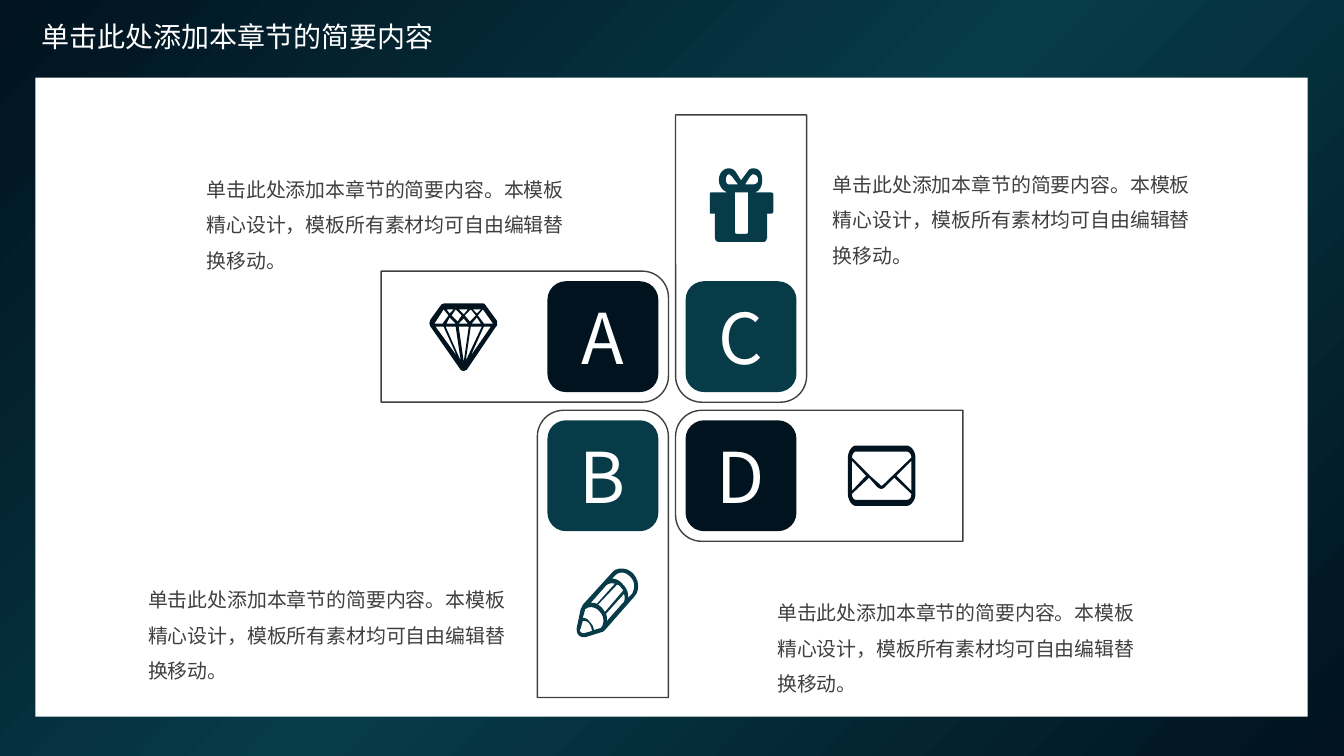
import copy

import pptx
import pptx.dml.color
import pptx.enum.shapes
import pptx.enum.text
import pptx.oxml.ns
import pptx.util

Inches = pptx.util.Inches
RGBColor = pptx.dml.color.RGBColor
SHAPE = pptx.enum.shapes.MSO_SHAPE
ALIGN = pptx.enum.text.PP_ALIGN
ANCHOR = pptx.enum.text.MSO_ANCHOR

NAVY = RGBColor(0x01, 0x13, 0x1F)
TEAL = RGBColor(0x07, 0x3B, 0x48)
WHITE = RGBColor(0xFF, 0xFF, 0xFF)
GREY = RGBColor(0x40, 0x40, 0x40)
FONT = "Noto Sans CJK SC"

TITLE = "单击此处添加本章节的简要内容"
CAPTION = "单击此处添加本章节的简要内容。本模板精心设计，模板所有素材均可自由编辑替换移动。"

TILE, ARM_WIDTH, ARM_LENGTH = 1.1, 1.3, 2.85
CURVE_STEPS = 6

# Icon contours in hundredths of an inch: pairs are corners, sixes are Bézier curves.
DIAMOND = [
    [(66, 16), (55, 1), (55, 1, 54, 0, 53, 0), (15, 0), (14, 0, 13, 1, 12, 1), (1, 16),
     (1, 17, 0, 18, 0, 20), (0, 21, 1, 23, 1, 23), (31, 66), (31, 66, 32, 67, 34, 67),
     (35, 67, 36, 66, 37, 66), (66, 23), (67, 23, 67, 21, 67, 20), (67, 18, 67, 17, 66, 16)],
    [(51, 6), (47, 10), (43, 6)],
    [(51, 20), (42, 20), (47, 14)],
    [(46, 12), (40, 18), (35, 12), (41, 6)],
    [(38, 20), (29, 20), (34, 15)],
    [(38, 6), (34, 11), (29, 6)],
    [(32, 12), (28, 18), (22, 12), (26, 6)],
    [(26, 20), (17, 20), (20, 14)],
    [(24, 6), (20, 10), (17, 6)],
    [(14, 6), (19, 12), (13, 20), (5, 20)],
    [(6, 23), (14, 23), (27, 52)],
    [(16, 23), (26, 23), (31, 57)],
    [(29, 23), (39, 23), (34, 58)],
    [(36, 57), (41, 23), (52, 23)],
    [(41, 52), (54, 23), (61, 23)],
    [(54, 20), (48, 12), (53, 6), (63, 20)],
]
ENVELOPE = [
    [(58, 0), (8, 0), (4, 0, 0, 6, 0, 12), (0, 48), (0, 54, 4, 60, 8, 60), (58, 60),
     (63, 60, 67, 54, 67, 48), (67, 12), (67, 6, 63, 0, 58, 0)],
    [(4, 15), (18, 30), (4, 45)],
    [(63, 48), (63, 52, 61, 54, 58, 54), (8, 54), (6, 54, 4, 52, 4, 48), (21, 32), (29, 41),
     (30, 42, 32, 43, 33, 43), (35, 43, 36, 42, 37, 41), (46, 32)],
    [(63, 45), (48, 30), (63, 15)],
    [(36, 38), (35, 39, 34, 40, 33, 40), (33, 40, 32, 39, 31, 38), (22, 30), (4, 12),
     (4, 9, 6, 6, 8, 6), (58, 6), (61, 6, 63, 9, 63, 12)],
]
PENCIL = [
    [(56, 5), (53, 2, 49, 0, 45, 0), (41, 0, 38, 1, 36, 3), (26, 14), (6, 36),
     (5, 38, 5, 39, 4, 40), (0, 59), (0, 59, 0, 60, 0, 61), (0, 65, 3, 68, 6, 68),
     (7, 68, 8, 68, 9, 68), (25, 63), (26, 63, 27, 62, 28, 61), (57, 28),
     (63, 22, 62, 12, 56, 5)],
    [(30, 50), (30, 49, 30, 47, 29, 45), (47, 25), (48, 29, 48, 33, 45, 35), (30, 52)],
    [(28, 43), (27, 42, 26, 40, 25, 39), (24, 38, 23, 37, 21, 36), (40, 16),
     (41, 16, 43, 17, 44, 19), (45, 20, 46, 21, 46, 22)],
    [(20, 35), (18, 34, 16, 34, 14, 34), (29, 17), (31, 15, 34, 14, 38, 15)],
    [(8, 64), (7, 64, 7, 64, 6, 64), (5, 64, 3, 63, 3, 61), (3, 61, 4, 60, 4, 59), (6, 52),
     (8, 52, 10, 52, 12, 54), (14, 57, 15, 59, 15, 62)],
    [(17, 61), (17, 58, 15, 55, 13, 53), (11, 50, 9, 49, 6, 49), (8, 42), (8, 41, 8, 40, 9, 40),
     (13, 37, 19, 38, 23, 43), (27, 47, 28, 54, 24, 59)],
    [(55, 25), (51, 29), (51, 28, 51, 28, 51, 27), (51, 23, 49, 19, 46, 16),
     (43, 12, 39, 10, 35, 10), (38, 7), (40, 5, 42, 4, 45, 4), (48, 4, 51, 6, 53, 8),
     (56, 11, 57, 14, 57, 17), (57, 20, 56, 23, 55, 25)],
]
GIFT = [
    [(63, 43), (63, 45, 61, 45, 61, 45), (57, 45), (57, 67), (57, 71, 55, 73, 54, 73), (9, 73),
     (6, 73, 5, 71, 5, 67), (5, 45), (2, 45), (0, 45, 0, 45, 0, 43), (0, 26),
     (0, 24, 0, 24, 2, 24), (19, 24), (14, 24, 9, 18, 9, 12), (9, 4, 14, 0, 19, 0),
     (22, 0, 25, 2, 26, 4), (31, 12), (37, 4), (38, 2, 40, 0, 43, 0), (49, 0, 52, 4, 52, 12),
     (52, 18, 49, 24, 43, 24), (61, 24), (61, 24, 63, 24, 63, 26)],
    [(28, 16), (22, 8), (22, 8, 20, 6, 19, 6), (17, 6, 16, 8, 16, 12), (16, 14, 17, 16, 19, 16)],
    [(38, 59), (38, 24), (25, 24), (25, 63), (25, 65, 26, 65, 28, 65), (35, 65),
     (37, 65, 38, 65, 38, 63)],
    [(43, 6), (41, 6, 41, 8, 40, 8), (35, 16), (43, 16), (46, 16, 48, 14, 48, 12),
     (48, 8, 46, 6, 43, 6)],
]

# letter, colour, tile centre, direction of the arm, its rotation, icon, icon corner from the centre
PETALS = [
    ("A", NAVY, (5.98, 3.34), (-1, 0), 90, DIAMOND, (-1.72, -0.33)),
    ("C", TEAL, (7.35, 3.34), (0, -1), 180, GIFT, (-0.31, -1.67)),
    ("B", TEAL, (5.98, 4.72), (0, 1), 0, PENCIL, (-0.26, 0.92)),
    ("D", NAVY, (7.35, 4.72), (1, 0), 270, ENVELOPE, (1.06, -0.3)),
]
CAPTION_CORNERS = [(2.05, 1.65), (8.26, 1.6), (1.47, 5.72), (7.71, 5.85)]


def style(shape, fill=None, line=None):
    shape.shadow.inherit = False
    if fill is None:
        shape.fill.background()
    else:
        shape.fill.solid()
        shape.fill.fore_color.rgb = fill
    if line is None:
        shape.line.fill.background()
    else:
        shape.line.color.rgb = line
        shape.line.width = pptx.util.Pt(1)


def write(shape, text, size, color, align=ALIGN.LEFT, anchor=ANCHOR.TOP, pitch=None, wrap=True):
    frame = shape.text_frame
    frame.word_wrap = wrap
    frame.vertical_anchor = anchor
    frame.margin_left = frame.margin_right = frame.margin_top = frame.margin_bottom = 0
    paragraph = frame.paragraphs[0]
    paragraph.alignment = align
    if pitch:
        paragraph.line_spacing = pptx.util.Pt(pitch)
    run = paragraph.add_run()
    run.text = text
    run.font.size = pptx.util.Pt(size)
    run.font.color.rgb = color
    run.font.name = FONT
    east_asian = run.font._element.makeelement(pptx.oxml.ns.qn("a:ea"), {"typeface": FONT})
    run.font._element.append(east_asian)


def flatten(contour):
    """Turn corners and curves into tenths of the contour's unit, curves as short chords."""
    points = []
    for step in contour:
        if len(step) == 2:
            points.append(step)
            continue
        controls = [points[-1], step[:2], step[2:4], step[4:]]
        for i in range(1, CURVE_STEPS + 1):
            t = i / CURVE_STEPS
            weights = ((1 - t) ** 3, 3 * t * (1 - t) ** 2, 3 * t * t * (1 - t), t ** 3)
            points.append(tuple(sum(w * c[axis] for w, c in zip(weights, controls))
                                for axis in (0, 1)))
    return [(10 * x, 10 * y) for x, y in points]


def add_icon(slide, left, top, contours, color):
    outlines = [flatten(contour) for contour in contours]
    builder = slide.shapes.build_freeform(*outlines[0][0], scale=Inches(1) / 1000)
    for index, outline in enumerate(outlines):
        if index:
            builder.move_to(*outline[0])
        builder.add_line_segments(outline[1:], close=True)
    style(builder.convert_to_shape(Inches(left), Inches(top)), fill=color)


def add_centred(slide, kind, x, y, width, height):
    return slide.shapes.add_shape(kind, Inches(x - width / 2), Inches(y - height / 2),
                                  Inches(width), Inches(height))


def add_petal(slide, letter, color, centre, direction, rotation, icon, icon_offset):
    x, y = centre
    reach = (ARM_LENGTH - ARM_WIDTH) / 2
    arm = add_centred(slide, SHAPE.ROUND_2_SAME_RECTANGLE, x + direction[0] * reach,
                      y + direction[1] * reach, ARM_WIDTH, ARM_LENGTH)
    arm.adjustments[0], arm.adjustments[1] = 0.2, 0
    arm.rotation = rotation
    style(arm, line=GREY)
    tile = add_centred(slide, SHAPE.ROUNDED_RECTANGLE, x, y, TILE, TILE)
    style(tile, fill=color)
    write(tile, letter, 50, WHITE, align=ALIGN.CENTER, anchor=ANCHOR.MIDDLE)
    add_icon(slide, x + icon_offset[0], y + icon_offset[1], icon, color)


def add_text(slide, left, top, width, height, text, **text_format):
    box = slide.shapes.add_textbox(Inches(left), Inches(top), Inches(width), Inches(height))
    write(box, text, **text_format)


def paint_background(slide):
    fill = slide.background.fill
    fill.gradient()
    fill.gradient_angle = 315
    last_stop = slide.element.find(".//" + pptx.oxml.ns.qn("a:gsLst"))[-1]
    last_stop.addprevious(copy.deepcopy(last_stop))
    for stop, position, color in zip(fill.gradient_stops, (0, 0.5, 1), (NAVY, TEAL, NAVY)):
        stop.position = position
        stop.color.rgb = color


def main():
    deck = pptx.Presentation()
    deck.slide_width, deck.slide_height = Inches(13.33), Inches(7.5)
    slide = deck.slides.add_slide(deck.slide_layouts[6])
    paint_background(slide)
    panel = slide.shapes.add_shape(SHAPE.RECTANGLE, Inches(0.35), Inches(0.77),
                                   Inches(12.62), Inches(6.34))
    style(panel, fill=WHITE)
    add_text(slide, 0.41, 0.19, 4.24, 0.44, TITLE, size=20, color=WHITE, wrap=False)
    for petal in PETALS:
        add_petal(slide, *petal)
    for left, top in CAPTION_CORNERS:
        add_text(slide, left, top, 3.66, 1.05, CAPTION, size=14.2, color=GREY, pitch=25.2)
    deck.save("out.pptx")


if __name__ == "__main__":
    main()
